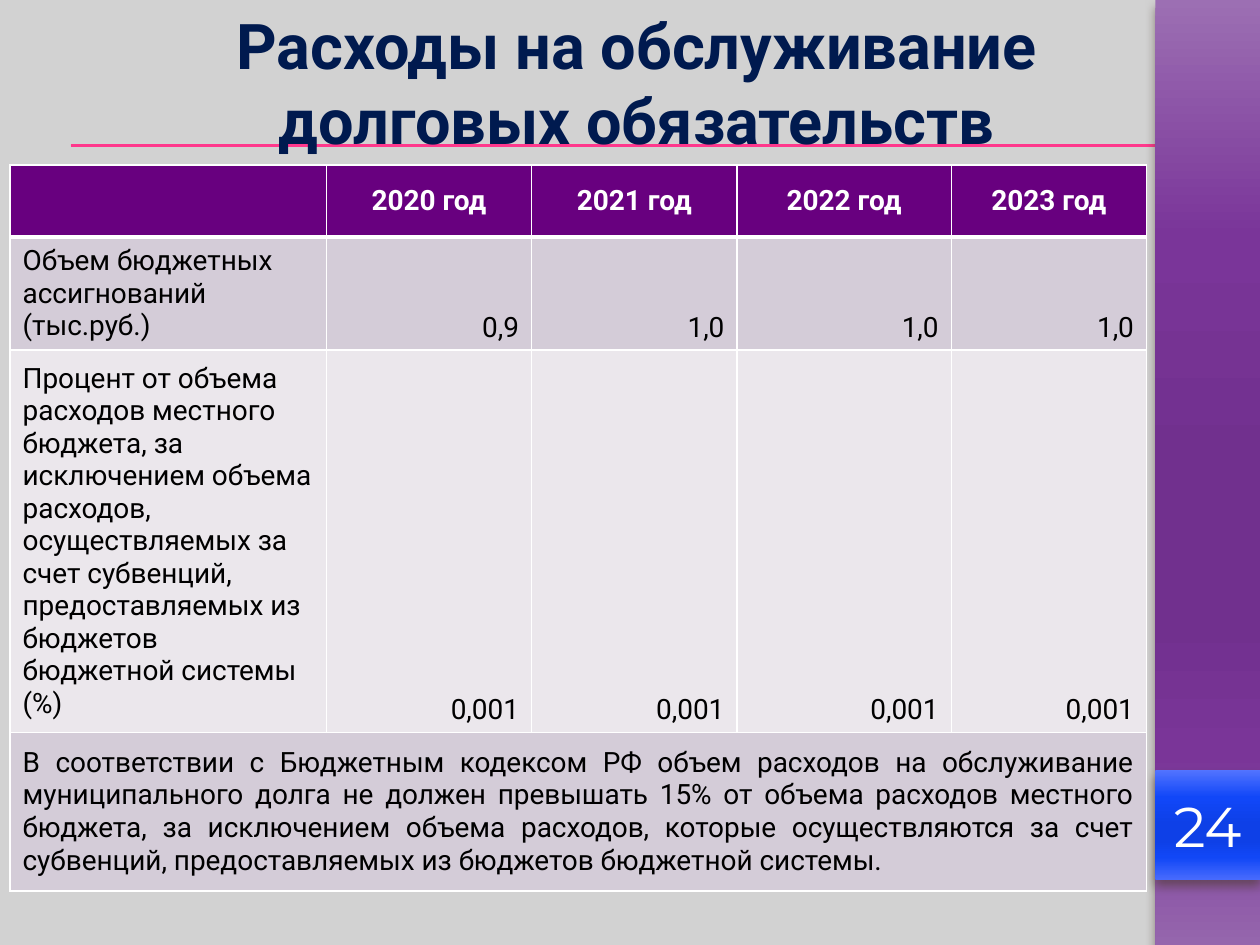
from lxml import etree
from pptx import Presentation
from pptx.dml.color import RGBColor
from pptx.enum.shapes import MSO_CONNECTOR, MSO_SHAPE
from pptx.enum.text import MSO_ANCHOR as Anchor, MSO_AUTO_SIZE as AutoSize, PP_ALIGN as Align
from pptx.oxml import parse_xml
from pptx.oxml.ns import nsdecls, qn
from pptx.util import Inches, Pt

BACKGROUND = RGBColor(0xD2, 0xD2, 0xD2)
WHITE = RGBColor(0xFF, 0xFF, 0xFF)
BLACK = RGBColor(0, 0, 0)
NAVY = RGBColor(0x00, 0x1A, 0x4F)
PINK = RGBColor(0xFF, 0x38, 0x8C)
HEADER = RGBColor(0x68, 0x00, 0x7F)
BAND_DARK = RGBColor(0xD4, 0xCC, 0xD8)
BAND_LIGHT = RGBColor(0xEB, 0xE7, 0xEC)
SHADOW = RGBColor(0x4E, 0x3B, 0x30)

STOPS = (0, 25, 50, 65, 80, 100)
PURPLES = [RGBColor.from_string(code) for code in
           ("9C6FB3", "7A3599", "71308E", "71308E", "7A3598", "9566AD")]
BLUES = [RGBColor.from_string(code) for code in
         ("5374FF", "1147F8", "0E40E7", "0E40E7", "1147F6", "476AFD")]

YEARS = ["2020 год", "2021 год", "2022 год", "2023 год"]
ROWS = [
    ["Объем бюджетных ассигнований (тыс.руб.)", "0,9", "1,0", "1,0", "1,0"],
    ["Процент от объема расходов местного бюджета, за исключением объема "
     "расходов, осуществляемых за счет субвенций, предоставляемых из "
     "бюджетов бюджетной системы (%)"] + ["0,001"] * 4,
]
NOTE = ("В соответствии с Бюджетным кодексом РФ объем расходов на обслуживание "
        "муниципального долга не должен превышать 15% от объема расходов местного "
        "бюджета, за исключением объема расходов, которые осуществляются за счет "
        "субвенций, предоставляемых из бюджетов бюджетной системы.")


def write_text(frame, text, size=16, color=BLACK, bold=False, align=Align.LEFT, font="Roboto"):
    paragraph = frame.paragraphs[0]
    paragraph.alignment = align
    run = paragraph.add_run()
    run.text = text
    run.font.name, run.font.size, run.font.bold = font, Pt(size), bold
    run.font.color.rgb = color


class SlideBuilder:
    """Holds the current slide and draws its elements in one style."""

    def __init__(self, slide):
        self.slide = slide
        self.shapes = slide.shapes
        slide.background.fill.solid()
        slide.background.fill.fore_color.rgb = BACKGROUND

    def rule(self, left, right, top):
        line = self.shapes.add_connector(
            MSO_CONNECTOR.STRAIGHT, Inches(left), Inches(top), Inches(right), Inches(top))
        line.line.color.rgb = PINK
        line.line.width = Pt(0.75)
        etree.SubElement(line._element.spPr, qn("a:effectLst"))

    def gradient_panel(self, left, top, width, height, colors):
        shape = self.shapes.add_shape(
            MSO_SHAPE.RECTANGLE, Inches(left), Inches(top), Inches(width), Inches(height))
        shape.line.fill.background()
        stops = "".join(
            f'<a:gs pos="{stop * 1000}"><a:srgbClr val="{color}"/></a:gs>'
            for stop, color in zip(STOPS, colors))
        properties = shape._element.spPr
        properties.find(qn("a:prstGeom")).addnext(parse_xml(
            f'<a:gradFill {nsdecls("a")} rotWithShape="1"><a:gsLst>{stops}</a:gsLst>'
            '<a:lin ang="5400000" scaled="0"/></a:gradFill>'))
        properties.append(parse_xml(
            f'<a:effectLst {nsdecls("a")}><a:outerShdw blurRad="{Pt(6)}" dist="{Pt(4)}" '
            f'dir="5400000" rotWithShape="0"><a:srgbClr val="{SHADOW}">'
            '<a:alpha val="60000"/></a:srgbClr></a:outerShdw></a:effectLst>'))
        return shape

    def title(self, text, left, top, width, height):
        title = self.shapes.title
        title.left, title.top = Inches(left), Inches(top)
        title.width, title.height = Inches(width), Inches(height)
        frame = title.text_frame
        frame.word_wrap = True
        frame.auto_size = AutoSize.SHAPE_TO_FIT_TEXT
        frame.vertical_anchor = Anchor.TOP
        write_text(frame, text, size=36, color=NAVY, bold=True, align=Align.CENTER)
        # Bring the title in front of the rules
        self.shapes._spTree.append(title._element)

    def cell(self, cell, text, fill, anchor=Anchor.MIDDLE, top=1, bottom=1, **style):
        properties = cell._tc.get_or_add_tcPr()
        for side, width in (("L", 1), ("R", 1), ("T", top), ("B", bottom)):
            properties.append(parse_xml(
                f'<a:ln{side} {nsdecls("a")} w="{Pt(width)}"><a:solidFill>'
                f'<a:srgbClr val="{WHITE}"/></a:solidFill></a:ln{side}>'))
        cell.fill.solid()
        cell.fill.fore_color.rgb = fill
        cell.vertical_anchor = anchor
        if text:
            write_text(cell.text_frame, text, **style)

    def table(self, left, top, widths, heights):
        table = self.shapes.add_table(
            len(heights), len(widths), Inches(left), Inches(top),
            Inches(sum(widths)), Inches(sum(heights))).table
        for column, width in zip(table.columns, widths):
            column.width = Inches(width)
        for row, height in zip(table.rows, heights):
            row.height = Inches(height)
        return table


def main():
    presentation = Presentation()
    presentation.slide_width, presentation.slide_height = Inches(10), Inches(7.5)
    builder = SlideBuilder(presentation.slides.add_slide(presentation.slide_layouts[5]))

    # Rules under the title, side band and page number
    for top in (1.15, 1.16):
        builder.rule(0.56, 10, top)
    builder.gradient_panel(9.17, 0, 0.83, 7.5, PURPLES)
    badge = builder.gradient_panel(9.17, 6.11, 0.83, 0.87, BLUES)
    badge.text_frame.vertical_anchor = Anchor.MIDDLE
    write_text(badge.text_frame, "24", size=32, color=WHITE, align=Align.CENTER,
               font="Montserrat")

    builder.title("Расходы на обслуживание долговых обязательств", 0.75, 0, 8.61, 1.31)

    # Table: header, data rows, merged note
    table = builder.table(0.08, 1.31, [2.51, 1.63, 1.63, 1.7, 1.55], [0.57, 0.68, 2.99, 1.26])
    for column, year in enumerate([""] + YEARS):
        builder.cell(table.cell(0, column), year, HEADER, bottom=3,
                     color=WHITE, bold=True, align=Align.CENTER)
    for row, (values, fill) in enumerate(zip(ROWS, (BAND_DARK, BAND_LIGHT)), start=1):
        for column, value in enumerate(values):
            builder.cell(table.cell(row, column), value, fill,
                         anchor=Anchor.BOTTOM if column else Anchor.MIDDLE,
                         top=3 if row == 1 else 1,
                         align=Align.RIGHT if column else Align.LEFT)
    table.cell(3, 0).merge(table.cell(3, 4))
    for column in range(5):
        builder.cell(table.cell(3, column), "" if column else NOTE, BAND_DARK,
                     align=Align.JUSTIFY)

    presentation.save("out.pptx")


if __name__ == "__main__":
    main()
